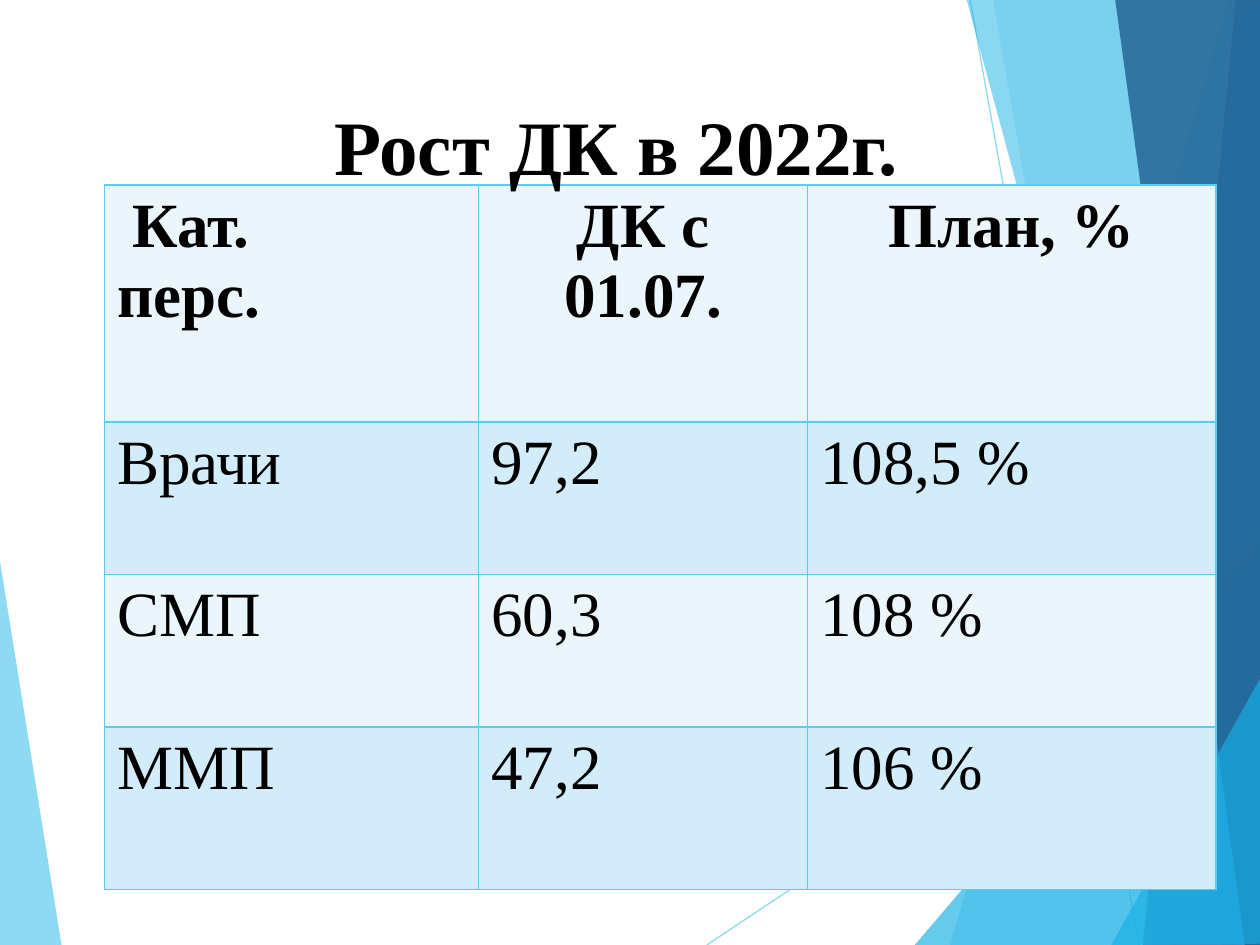
import pptx
import pptx.util
import pptx.dml.color
import pptx.enum.shapes
import pptx.enum.text
import pptx.oxml
import pptx.oxml.ns
from lxml import etree

Inches = pptx.util.Inches
Pt = pptx.util.Pt
qn = pptx.oxml.ns.qn
Align = pptx.enum.text.PP_ALIGN

FONT = "Times New Roman"
SKY, CYAN, BLUE, NAVY = "5FCBEF", "17B0E4", "2E83C3", "226292"
BANDS = ("EAF6FC", "D2ECF9")

# Slanted panels: colour, opacity in percent, corners
LEFT = (SKY, 70, [(-0.01, 4.39), (0.49, 7.51), (-0.01, 7.5)])
RIGHT = [
    (SKY, 36, [(9.75, 0), (7.54, 7.5), (10.02, 7.51), (10.01, 0.01)]),
    (SKY, 20, [(7.88, -0.01), (9.19, 7.5), (10.01, 7.5), (10.01, -0.01)]),
    (CYAN, 66, [(7.26, 7.5), (10, 4.29), (10.01, 7.5)]),
    (CYAN, 50, [(7.67, -0.01), (9.7, 7.5), (10.01, 7.49), (10.01, -0.01)]),
    (BLUE, 70, [(9.81, -0.01), (9.07, 7.5), (10.01, 7.5), (10, -0.01)]),
    (NAVY, 82, [(8.85, -0.01), (9.88, 7.5), (10.02, 7.5), (10, -0.01)]),
    (CYAN, 66, [(8.82, 7.5), (10.02, 5.35), (10.02, 7.49)]),
]
LINES = [(5.61, 7.5, 10.01, 4.57), (7.7, 0, 9.04, 7.5)]

COLS = (2.97, 2.61, 3.24)
ROWS = (1.88, 1.21, 1.21, 1.29)
DATA = [
    (" Кат.\nперс.", "ДК с 01.07.", "План, %"),
    ("Врачи", "97,2", "108,5 %"),
    ("СМП", "60,3", "108 %"),
    ("ММП", "47,2", "106 %"),
]


def paint(target, color, alpha=100):
    """Set a solid colour on a fill, with opacity in percent."""
    target.solid()
    target.fore_color.rgb = pptx.dml.color.RGBColor.from_string(color)
    if alpha < 100:
        tone = target._xPr.find(".//" + qn("a:srgbClr"))
        etree.SubElement(tone, qn("a:alpha")).set("val", str(alpha * 1000))


def add_panel(slide, color, alpha, points):
    corners = [(Inches(x), Inches(y)) for x, y in points]
    outline = slide.shapes.build_freeform(*corners[0], scale=1.0)
    outline.add_line_segments(corners[1:], close=True)
    panel = outline.convert_to_shape()
    panel.shadow.inherit = False
    paint(panel.fill, color, alpha)
    panel.line.fill.background()


def add_line(slide, ends):
    kind = pptx.enum.shapes.MSO_CONNECTOR.STRAIGHT
    line = slide.shapes.add_connector(kind, *map(Inches, ends))
    line.line.width = Pt(0.75)
    paint(line.line.fill, SKY, 70)
    etree.SubElement(line._element.spPr, qn("a:effectLst"))


def write(frame, text, size, bold, align):
    frame.word_wrap = True
    for i, part in enumerate(text.split("\n")):
        para = frame.add_paragraph() if i else frame.paragraphs[0]
        para.alignment = align
        run = para.add_run()
        run.text = part
        run.font.name = FONT
        run.font.size = Pt(size)
        run.font.bold = bold
        paint(run.font.fill, "000000")


def add_edges(cell):
    """Draw a thin border on all four sides, ahead of the cell's fill."""
    props = cell._tc.get_or_add_tcPr()
    for i, side in enumerate(("lnL", "lnR", "lnT", "lnB")):
        edge = etree.Element(qn("a:" + side), w=str(Pt(1)))
        fill = etree.SubElement(edge, qn("a:solidFill"))
        etree.SubElement(fill, qn("a:srgbClr")).set("val", SKY)
        props.insert(i, edge)


def add_grid(slide):
    box = map(Inches, (0.83, 1.47, sum(COLS), sum(ROWS)))
    table = slide.shapes.add_table(len(ROWS), len(COLS), *box).table
    for col, width in zip(table.columns, COLS):
        col.width = Inches(width)
    for r, (row, height) in enumerate(zip(table.rows, ROWS)):
        row.height = Inches(height)
        for c, text in enumerate(DATA[r]):
            cell = table.cell(r, c)
            head = r == 0
            align = Align.CENTER if head and c else Align.LEFT
            write(cell.text_frame, text, 36, head, align)
            paint(cell.fill, BANDS[r % 2])
            add_edges(cell)


def add_title(slide, text):
    box = slide.shapes.add_textbox(*map(Inches, (0.67, 0.67, 6.94, 1.44)))
    frame = box.text_frame
    frame.margin_left = Inches(1.6)
    frame.margin_top = Inches(0.11)
    write(frame, text, 44, True, Align.CENTER)


def main():
    deck = pptx.Presentation()
    deck.slide_width, deck.slide_height = Inches(10), Inches(7.5)
    slide = deck.slides.add_slide(deck.slide_layouts[6])

    # Background decoration
    add_panel(slide, *LEFT)
    for ends in LINES:
        add_line(slide, ends)
    for panel in RIGHT:
        add_panel(slide, *panel)

    # Content
    add_grid(slide)
    add_title(slide, "Рост ДК в 2022г.")
    deck.save("out.pptx")


if __name__ == "__main__":
    main()
